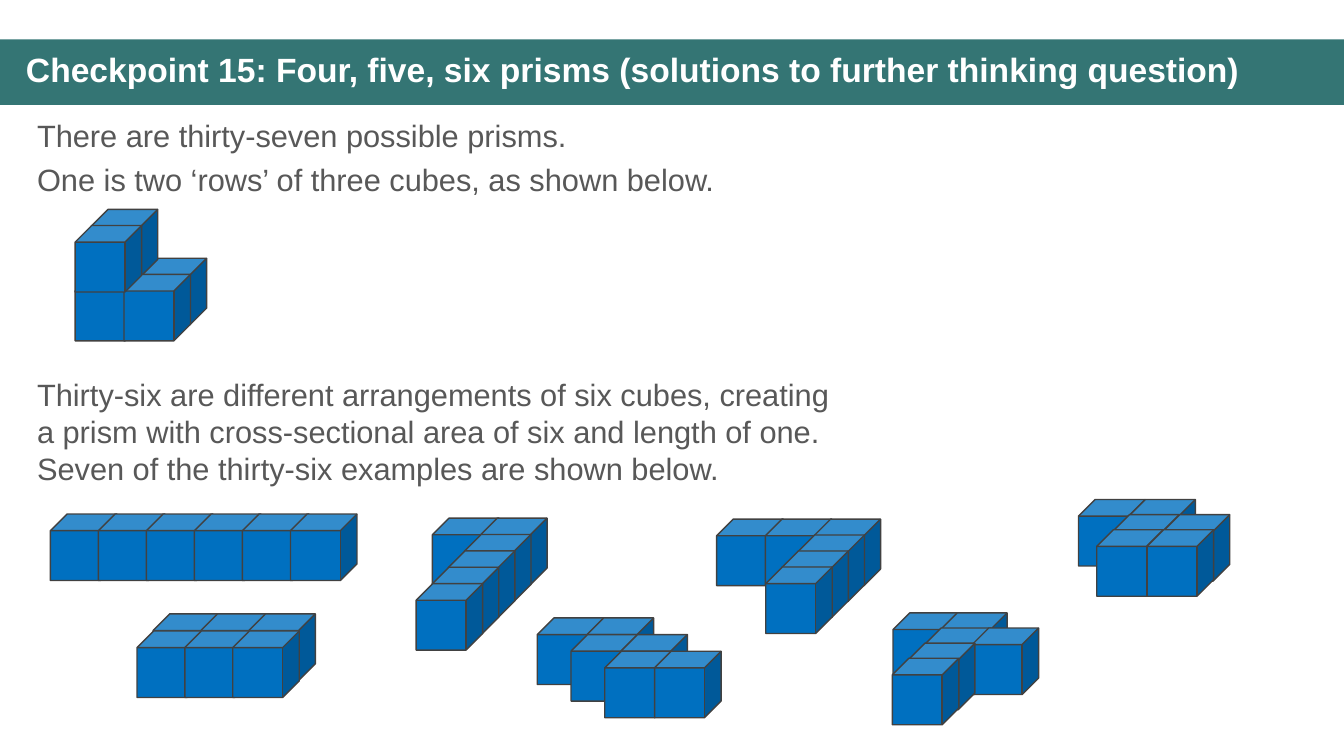
from pptx import Presentation
from pptx.dml.color import RGBColor
from pptx.enum import shapes, text
from pptx.util import Pt

COLOURS = {
    "banner": "347574",
    "title": "FFFFFF",
    "body": "585858",
    "cube": "0070C0",
    "edge": "414141",
}
CUBE_SIZE = 47.5
FORWARD_SHIFT = 11.5


def colour(name):
    return RGBColor.from_string(COLOURS[name])


def add_banner(slide):
    shape = slide.shapes.add_shape(
        shapes.MSO_SHAPE.RECTANGLE, Pt(0), Pt(28.2), Pt(960), Pt(46.8))
    shape.shadow.inherit = False
    shape.fill.solid()
    shape.fill.fore_color.rgb = colour("banner")
    shape.line.fill.background()


def add_text(slide, box, lines, size, colour_name, bold=False, line_spacing=1.0):
    shape = slide.shapes.add_textbox(*map(Pt, box))
    frame = shape.text_frame
    frame.word_wrap = True
    frame.vertical_anchor = text.MSO_ANCHOR.TOP
    for index, line in enumerate(lines):
        paragraph = frame.add_paragraph() if index else frame.paragraphs[0]
        paragraph.text = line
        paragraph.line_spacing = line_spacing
        paragraph.space_before = Pt(5 if index else 0)
        paragraph.font.name = "Arial"
        paragraph.font.size = Pt(size)
        paragraph.font.bold = bold
        paragraph.font.color.rgb = colour(colour_name)


def add_cube(group, left, top):
    shape = group.shapes.add_shape(
        shapes.MSO_SHAPE.CUBE, Pt(left), Pt(top), Pt(CUBE_SIZE), Pt(CUBE_SIZE))
    shape.shadow.inherit = False
    shape.fill.solid()
    shape.fill.fore_color.rgb = colour("cube")
    shape.line.color.rgb = colour("edge")
    shape.line.width = Pt(1)


def add_prism(slide, left, top, across_step, forward_drop, cells):
    group = slide.shapes.add_group_shape()
    for across, forward, up in cells:
        add_cube(
            group,
            left + across * across_step - forward * FORWARD_SHIFT,
            top + forward * forward_drop - up * across_step)


def flat(*cells):
    return [(across, forward, 0) for across, forward in cells]


def main():
    presentation = Presentation()
    presentation.slide_width = Pt(960)
    presentation.slide_height = Pt(540)
    slide = presentation.slides.add_slide(presentation.slide_layouts[6])

    add_banner(slide)
    add_text(
        slide, (11.5, 34.6, 939, 33.8),
        ["Checkpoint 15: Four, five, six prisms (solutions to further thinking question)"],
        24, "title", bold=True, line_spacing=0.9)
    add_text(
        slide, (19.4, 80, 500, 98),
        ["There are thirty-seven possible prisms.",
         "One is two ‘rows’ of three cubes, as shown below."],
        22, "body")
    add_text(
        slide, (19.4, 265, 583, 87),
        ["Thirty-six are different arrangements of six cubes, creating a prism with "
         "cross-sectional area of six and length of one. Seven of the thirty-six "
         "examples are shown below."],
        22, "body")

    l_rows = [(across, forward, up) for forward in range(2)
              for across, up in ((0, 0), (1, 0), (0, 1))]
    row_of_six = flat(*((across, 0) for across in range(6)))
    two_by_three = flat(*((across, forward) for forward in range(2) for across in range(3)))
    staircase = flat(*((row + across, row) for row in range(3) for across in range(2)))
    long_t = flat((0, 0), (1, 0), (2, 0), (2, 1), (2, 2), (2, 3))
    long_l = flat((0, 0), (1, 0), (1, 1), (1, 2), (1, 3), (1, 4))
    zigzag = flat((0, 0), (1, 0), (1, 1), (2, 1), (1, 2), (2, 2))
    branch = flat((0, 0), (1, 0), (1, 1), (2, 1), (1, 2), (1, 3))

    prisms = [
        (65.2, 184.5, 34.9, 11.5, l_rows),
        (36, 367.2, 34.3, 11.5, row_of_six),
        (109.4, 438.5, 34.2, 12.2, two_by_three),
        (383.8, 441.4, 35.6, 11.9, staircase),
        (511.9, 370.8, 34.8, 11.4, long_t),
        (308.9, 370.1, 34.4, 11.7, long_l),
        (770.4, 356.8, 36, 10.8, zigzag),
        (637.9, 437.8, 34, 10.8, branch),
    ]
    for prism in prisms:
        add_prism(slide, *prism)

    presentation.save("out.pptx")


if __name__ == "__main__":
    main()
